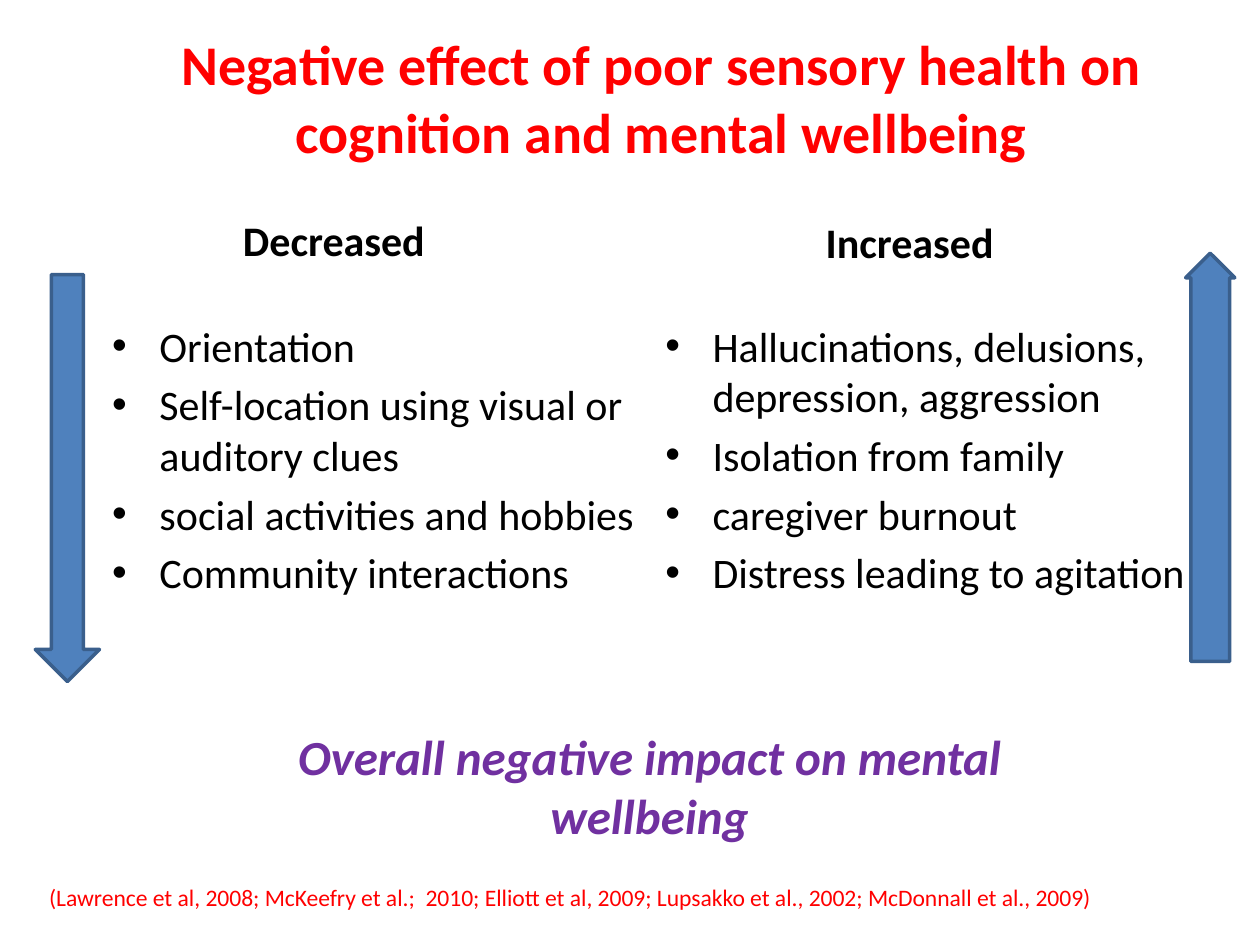
"""Build a slide on how poor sensory health affects cognition and wellbeing."""
import pptx
import pptx.dml.color
import pptx.enum.shapes
import pptx.enum.text
import pptx.util

Inches = pptx.util.Inches
ALIGN = pptx.enum.text.PP_ALIGN
ANCHOR = pptx.enum.text.MSO_ANCHOR
SHAPE = pptx.enum.shapes.MSO_SHAPE

THEME = {
    "font": "Calibri",
    "red": "FF0000", "black": "000000", "purple": "7030A0",
    "arrow": "4F81BD", "arrow_line": "3A5F8C",
    "title": 32, "body": 24, "summary": 28, "citation": 13.5,
}
TITLE = "Negative effect of poor sensory health on cognition and mental wellbeing"
COLUMNS = [
    {
        "heading": "Decreased", "heading_box": (0.44, 1.45, 4.42, 0.7),
        "points": ["Orientation", "Self-location using visual or auditory clues",
                   "social activities and hobbies", "Community interactions"],
        "points_box": (0.79, 2.49, 4.42, 4.32),
        "arrow": SHAPE.DOWN_ARROW, "arrow_box": (0.28, 2.18, 0.51, 3.23),
        "shaft": 0.5,
    },
    {
        "heading": "Increased", "heading_box": (5.51, 1.47, 3.42, 0.7),
        "points": ["Hallucinations, delusions, depression, aggression",
                   "Isolation from family", "caregiver burnout",
                   "Distress leading to agitation"],
        "points_box": (5.18, 2.49, 4.42, 4.32),
        "arrow": SHAPE.UP_ARROW, "arrow_box": (9.41, 2.01, 0.39, 3.24),
        "shaft": 0.79,
    },
]
SUMMARY = "Overall negative impact on mental wellbeing"
CITATION = ("(Lawrence et al, 2008; McKeefry et al.;  2010; Elliott et al, 2009; "
            "Lupsakko et al., 2002; McDonnall et al., 2009)")


def color(name):
    return pptx.dml.color.RGBColor.from_string(THEME[name])


def place(shape, box):
    shape.left, shape.top, shape.width, shape.height = map(Inches, box)


def write(shape, lines, size="body", ink="black", bold=False, italic=False,
          align=ALIGN.LEFT, anchor=ANCHOR.TOP):
    frame = shape.text_frame
    frame.text = "\n".join(lines)
    frame.word_wrap = True
    frame.auto_size = pptx.enum.text.MSO_AUTO_SIZE.NONE
    frame.vertical_anchor = anchor
    for paragraph in frame.paragraphs:
        paragraph.alignment = align
        font = paragraph.runs[0].font
        font.name, font.size = THEME["font"], pptx.util.Pt(THEME[size])
        font.bold, font.italic = bold, italic
        font.color.rgb = color(ink)


def add_arrow(slide, column):
    arrow = slide.shapes.add_shape(column["arrow"], *map(Inches, column["arrow_box"]))
    arrow.adjustments[0] = column["shaft"]
    arrow.shadow.inherit = False
    arrow.fill.solid()
    arrow.fill.fore_color.rgb = color("arrow")
    arrow.line.color.rgb = color("arrow_line")
    arrow.line.width = pptx.util.Pt(2)


def main():
    presentation = pptx.Presentation()
    presentation.slide_width, presentation.slide_height = Inches(10), Inches(7.5)
    comparison = presentation.slide_layouts.get_by_name("Comparison")
    slide = presentation.slides.add_slide(comparison)

    title, *bodies = slide.placeholders
    place(title, (0.88, 0.29, 8.74, 0.96))
    write(title, [TITLE], size="title", ink="red", bold=True,
          align=ALIGN.CENTER, anchor=ANCHOR.MIDDLE)

    for column, heading, points in zip(COLUMNS, bodies[::2], bodies[1::2]):
        place(heading, column["heading_box"])
        write(heading, [column["heading"]], bold=True,
              align=ALIGN.CENTER, anchor=ANCHOR.BOTTOM)
        place(points, column["points_box"])
        write(points, column["points"])
        add_arrow(slide, column)

    citation = slide.shapes.add_textbox(*map(Inches, (0.28, 6.97, 8.65, 0.53)))
    write(citation, [CITATION], size="citation", ink="red")
    citation.text_frame.margin_left = Inches(0.11)
    citation.text_frame.margin_top = Inches(0.04)

    summary = slide.shapes.add_textbox(*map(Inches, (1.77, 5.72, 6.77, 1.04)))
    write(summary, [SUMMARY], size="summary", ink="purple", bold=True,
          italic=True, align=ALIGN.CENTER)

    presentation.save("out.pptx")


if __name__ == "__main__":
    main()
